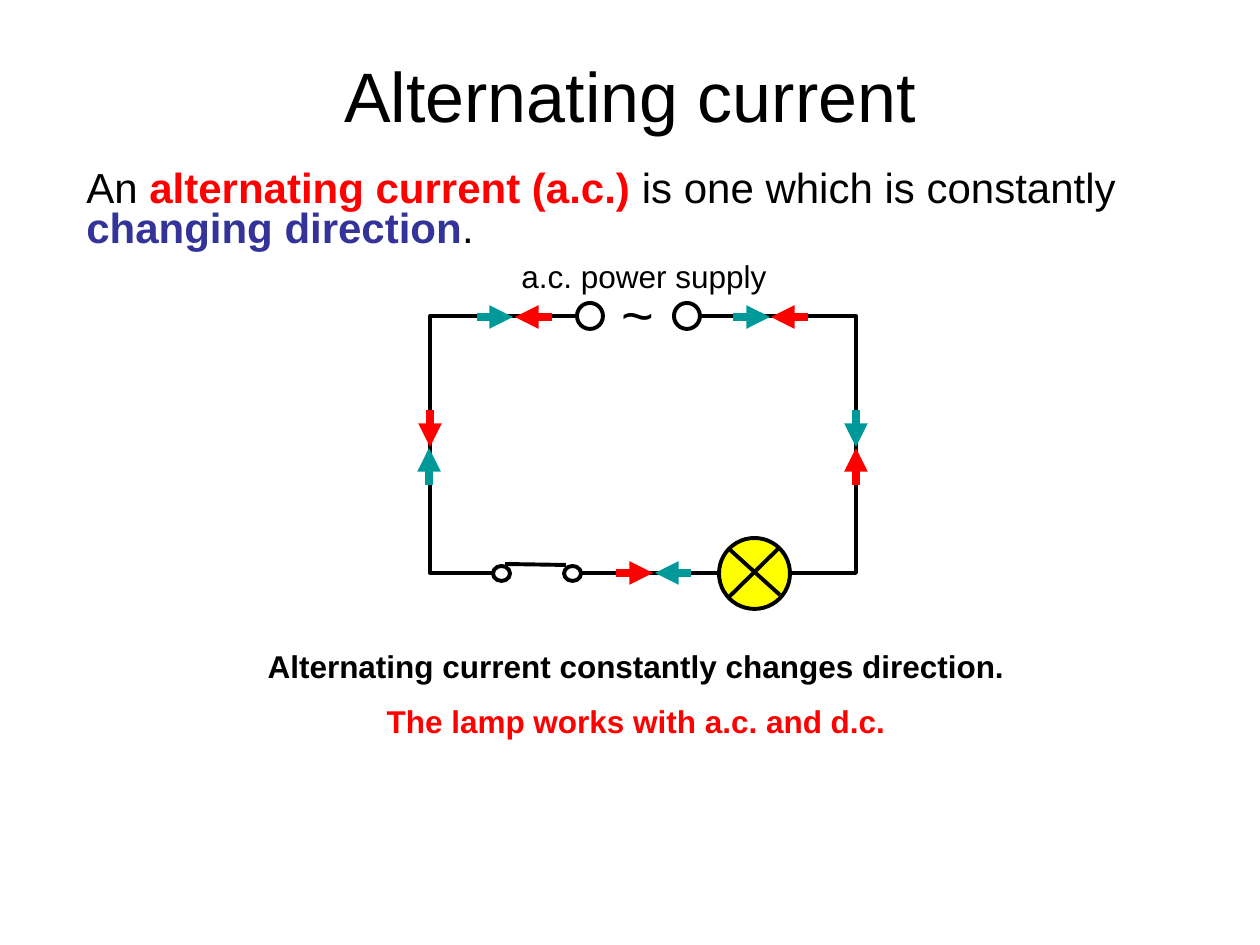
"""Build a slide on alternating current with a lamp circuit."""
import pptx
import pptx.dml.color
import pptx.enum.shapes
import pptx.enum.text
import pptx.oxml.ns
import pptx.util
from lxml import etree

RGB = pptx.dml.color.RGBColor
BLACK = RGB(0x00, 0x00, 0x00)
WHITE = RGB(0xFF, 0xFF, 0xFF)
RED = RGB(0xFF, 0x00, 0x00)
BLUE = RGB(0x33, 0x33, 0x99)
TEAL = RGB(0x00, 0x99, 0x99)
YELLOW = RGB(0xFF, 0xFF, 0x00)
PX = 914400 / 126
LEFT = pptx.enum.text.PP_ALIGN.LEFT
CENTER = pptx.enum.text.PP_ALIGN.CENTER
TOP = pptx.enum.text.MSO_ANCHOR.TOP
MIDDLE = pptx.enum.text.MSO_ANCHOR.MIDDLE
RECT = pptx.enum.shapes.MSO_SHAPE.RECTANGLE
OVAL = pptx.enum.shapes.MSO_SHAPE.OVAL


def add_shape(kind, box, fill=None, outlined=True):
    sp = s.shapes.add_shape(kind, *[round(v * PX) for v in box])
    sp.shadow.inherit = False
    if fill is None:
        sp.fill.background()
    else:
        sp.fill.solid()
        sp.fill.fore_color.rgb = fill
    if outlined:
        sp.line.color.rgb = BLACK
        sp.line.width = pptx.util.Pt(2.25)
    else:
        sp.line.fill.background()


def add_line(ends, color=BLACK, width=2.25, arrow=False):
    cn = s.shapes.add_connector(pptx.enum.shapes.MSO_CONNECTOR.STRAIGHT, *[round(v * PX) for v in ends])
    cn.line.color.rgb = color
    cn.line.width = pptx.util.Pt(width)
    if arrow:
        etree.SubElement(cn.line._get_or_add_ln(), pptx.oxml.ns.qn("a:tailEnd"), type="triangle")
    etree.SubElement(cn._element.spPr, pptx.oxml.ns.qn("a:effectLst"))


prs = pptx.Presentation()
prs.slide_width = round(1260 * PX)
prs.slide_height = round(945 * PX)
s = prs.slides.add_slide(prs.slide_layouts[6])

add_shape(RECT, (430, 316, 426, 257))
for wire in [(548, 316, 747, 316), (436, 573, 635, 573), (653, 573, 852, 573)]:
    add_line(wire)
for gap in [(592, 251, 97, 130), (501, 549, 70, 47)]:
    add_shape(RECT, gap, WHITE, outlined=False)
for x in (577, 674):
    add_shape(OVAL, (x, 303, 26, 26), WHITE)
for x in (493, 564):
    add_shape(OVAL, (x, 566, 17, 15), WHITE)
add_line((566, 565, 505, 564))
add_shape(OVAL, (719, 538, 71, 71), YELLOW)
for cross in [(729, 597, 779, 548), (780, 595, 728, 548)]:
    add_line(cross)

ARROWS = [
    (RED, [(808, 317, 771, 317), (552, 317, 515, 317), (616, 573, 653, 573),
           (430, 410, 430, 447), (856, 485, 856, 448)]),
    (TEAL, [(733, 317, 770, 317), (477, 317, 513, 317), (691, 573, 655, 573),
            (429, 485, 429, 448), (856, 410, 856, 447)]),
]
for color, arrows in ARROWS:
    for ends in arrows:
        add_line(ends, color, 4.5, arrow=True)

TEXTS = [
    ((63, 38, 1134, 113), 40, CENTER, MIDDLE, 1, [[("Alternating current", BLACK, False)]]),
    ((74, 165, 1132, 112), 24, LEFT, TOP, 0.8, [[
        ("An ", BLACK, False),
        ("alternating current (a.c.)", RED, True),
        (" is one which is constantly ", BLACK, False),
        ("changing direction", BLUE, True),
        (".", BLACK, False)]]),
    ((243, 641, 786, 107), 18, CENTER, TOP, 1, [
        [("Alternating current constantly changes direction.", BLACK, True)],
        [("The lamp works with a.c. and d.c.", RED, True)]]),
    ((609, 273, 62, 79), 32, LEFT, TOP, 1, [[("~", BLACK, False)]]),
    ((509, 251, 280, 50), 18, LEFT, TOP, 1, [[("a.c. power supply", BLACK, False)]]),
]
for box, size, align, anchor, spacing, paragraphs in TEXTS:
    tf = s.shapes.add_textbox(*[round(v * PX) for v in box]).text_frame
    tf.word_wrap = True
    tf.vertical_anchor = anchor
    for i, runs in enumerate(paragraphs):
        p = tf.add_paragraph() if i else tf.paragraphs[0]
        p.alignment = align
        p.line_spacing = spacing
        p.space_before = pptx.util.Pt(9.5 if i else 0)
        for text, color, bold in runs:
            r = p.add_run()
            r.text = text
            r.font.name = "Arial"
            r.font.size = pptx.util.Pt(size)
            r.font.bold = bold
            r.font.color.rgb = color

prs.save("out.pptx")
